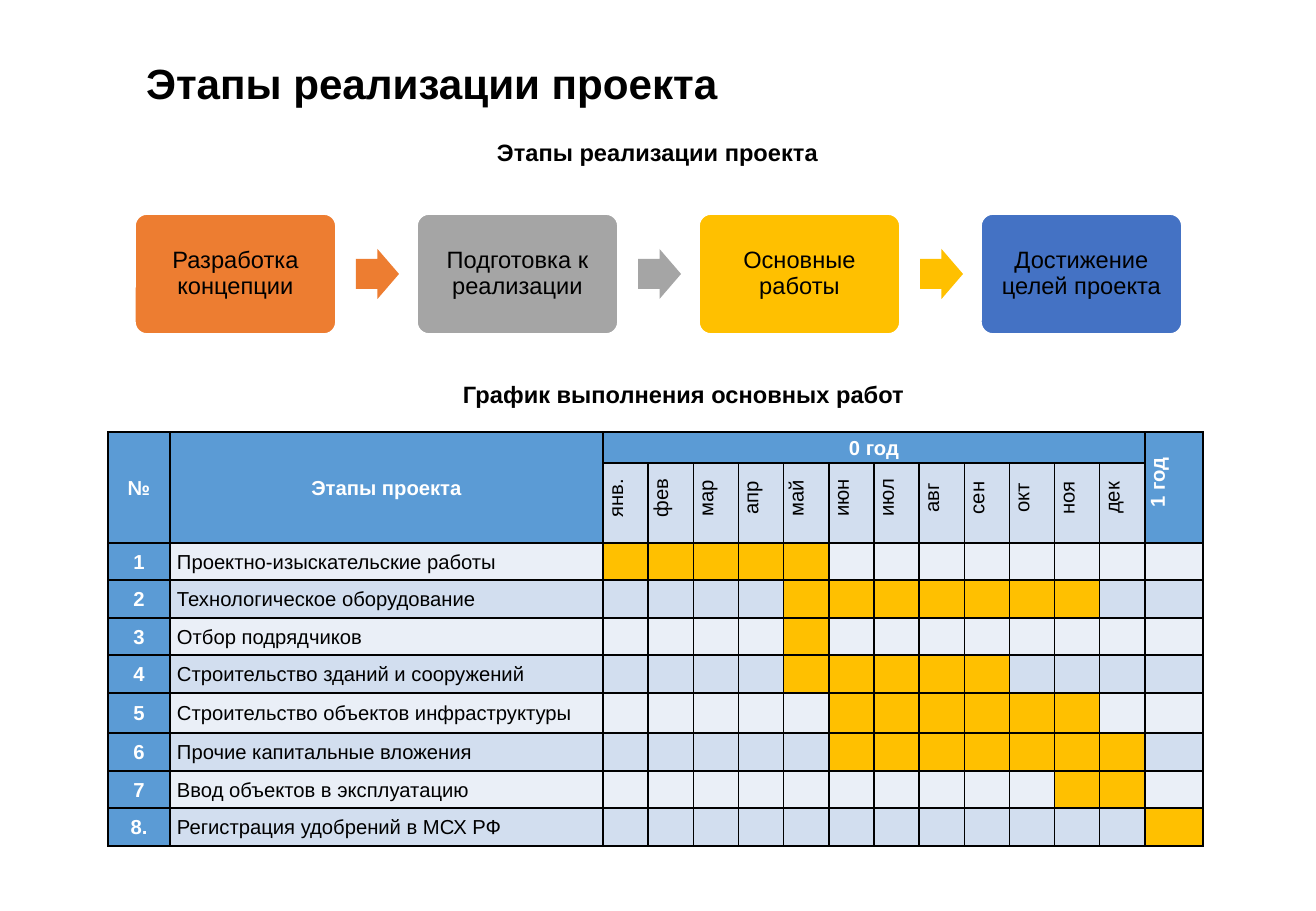
from lxml.etree import SubElement
from pptx import Presentation
from pptx.dml.color import RGBColor
from pptx.enum.shapes import MSO_SHAPE
from pptx.enum.text import MSO_ANCHOR, PP_ALIGN
from pptx.oxml.ns import qn
from pptx.util import Pt

# Content
TITLE = "Этапы реализации проекта"
HEADS = [  # text, left, top, width
    ("Этапы реализации проекта", 485, 132, 348),
    ("График выполнения основных работ", 451, 374, 469),
]
STEPS = [
    ("Разработка концепции", "ED7D31"),
    ("Подготовка к реализации", "A5A5A5"),
    ("Основные работы", "FFC000"),
    ("Достижение целей проекта", "4472C4"),
]
MONTHS = ["янв.", "фев", "мар", "апр", "май", "июн",
          "июл", "авг", "сен", "окт", "ноя", "дек"]
WORKS = [  # number, stage, first and last busy period, row height
    ("1", "Проектно-изыскательские работы", 0, 4, 37),
    ("2", "Технологическое оборудование", 4, 10, 38),
    ("3", "Отбор подрядчиков", 4, 4, 37),
    ("4", "Строительство зданий и сооружений", 4, 8, 38),
    ("5", "Строительство объектов инфраструктуры", 5, 10, 40),
    ("6", "Прочие капитальные вложения", 5, 11, 38),
    ("7", "Ввод объектов в эксплуатацию", 10, 11, 37),
    ("8.", "Регистрация удобрений в МСХ РФ", 12, 12, 38),
]
BLACK, WHITE, BLUE, GOLD = "000000", "FFFFFF", "5B9BD5", "FFC000"
PALE, BAND = "EAEFF7", "D2DEEF"
FONT = "Arial"


def px(n):
    return round(n * 914400 / 121.5)


def box(*sides):
    return [px(n) for n in sides]


def color(code):
    return RGBColor.from_string(code)


def write(frame, text, size, bold=False, ink=BLACK, align=None, space=None):
    frame.text = text
    para = frame.paragraphs[0]
    para.alignment, para.line_spacing = align, space
    font = para.font
    font.name, font.size, font.bold = FONT, Pt(size), bold
    font.color.rgb = color(ink)
    return para


def draw(kind, place, fill, first, second=None):
    shape = slide.shapes.add_shape(kind, *box(*place))
    shape.shadow.inherit = False
    shape.fill.solid()
    shape.fill.fore_color.rgb = color(fill)
    shape.adjustments[0] = first
    if second is not None:
        shape.adjustments[1] = second
    return shape


def style(cell, fill, text="", bold=False, ink=BLACK,
          align=PP_ALIGN.CENTER, turn=False):
    para = write(cell.text_frame, text, 12, bold, ink, align, 1.07)
    cell.vertical_anchor = MSO_ANCHOR.MIDDLE
    cell.margin_left = cell.margin_right = px(7)
    cell.margin_top = cell.margin_bottom = 0
    props = cell._tc.get_or_add_tcPr()
    if turn:
        props.set("vert", "vert270")
        para._p.get_or_add_pPr().set("marL", str(px(10)))
    # Borders come before the fill in the cell properties
    for side in ("a:lnL", "a:lnR", "a:lnT", "a:lnB"):
        line = SubElement(props, qn(side), w=str(Pt(1)))
        SubElement(SubElement(line, qn("a:solidFill")),
                   qn("a:srgbClr"), val=BLACK)
    cell.fill.solid()
    cell.fill.fore_color.rgb = color(fill)


deck = Presentation()
deck.slide_width, deck.slide_height = box(1316, 911)
slide = deck.slides.add_slide(deck.slide_layouts[5])

# Title
title = slide.shapes.title
title.left, title.top, title.width, title.height = box(134, 38, 1047, 95)
title.text_frame.vertical_anchor = MSO_ANCHOR.MIDDLE
write(title.text_frame, TITLE, 25, True, align=PP_ALIGN.LEFT, space=0.9)

# Section headings
for text, left, top, width in HEADS:
    head = slide.shapes.add_textbox(*box(left, top, width, 41))
    head.text_frame.word_wrap = False
    write(head.text_frame, text, 14, True)

# Process steps with arrows between them
for i, (text, fill) in enumerate(STEPS):
    left = 135 + 282 * i
    step = draw(MSO_SHAPE.ROUNDED_RECTANGLE, (left, 214, 201, 120), fill, 0.1)
    step.line.color.rgb = color(WHITE)
    step.line.width = Pt(1)
    frame = step.text_frame
    frame.word_wrap = True
    frame.vertical_anchor = MSO_ANCHOR.MIDDLE
    frame.margin_left = frame.margin_right = px(11)
    write(frame, text, 14, align=PP_ALIGN.CENTER, space=0.9)
    if i < len(STEPS) - 1:
        arrow = draw(MSO_SHAPE.RIGHT_ARROW, (left + 221, 249, 43, 50),
                     fill, 0.6, 0.5)
        arrow.line.fill.background()

# Schedule table
widths = [62, 433] + [542 / len(MONTHS)] * len(MONTHS) + [58]
heights = [31, 80] + [work[-1] for work in WORKS]
table = slide.shapes.add_table(
    len(heights), len(widths),
    *box(108, 432, sum(widths), sum(heights))).table
table.first_row = table.horz_banding = False
for col, width in zip(table.columns, widths):
    col.width = px(width)
for row, height in zip(table.rows, heights):
    row.height = px(height)

# Header rows
last = len(widths) - 1
names = {0: "№", 1: "Этапы проекта", 2: "0 год", last: "1 год"}
for c in range(len(widths)):
    style(table.cell(0, c), BLUE, names.get(c, ""), True, WHITE,
          turn=c == last)
    if 2 <= c < last:
        style(table.cell(1, c), BAND, MONTHS[c - 2], turn=True)
    else:
        style(table.cell(1, c), BLUE)
for c in (0, 1, last):
    table.cell(0, c).merge(table.cell(1, c))
table.cell(0, 2).merge(table.cell(0, last - 1))

# Work rows
for r, (number, stage, start, end, _) in enumerate(WORKS, 2):
    back = BAND if r % 2 else PALE
    style(table.cell(r, 0), BLUE, number, True, WHITE)
    style(table.cell(r, 1), back, stage, align=PP_ALIGN.LEFT)
    for c in range(2, len(widths)):
        style(table.cell(r, c), GOLD if start <= c - 2 <= end else back)

deck.save("out.pptx")
